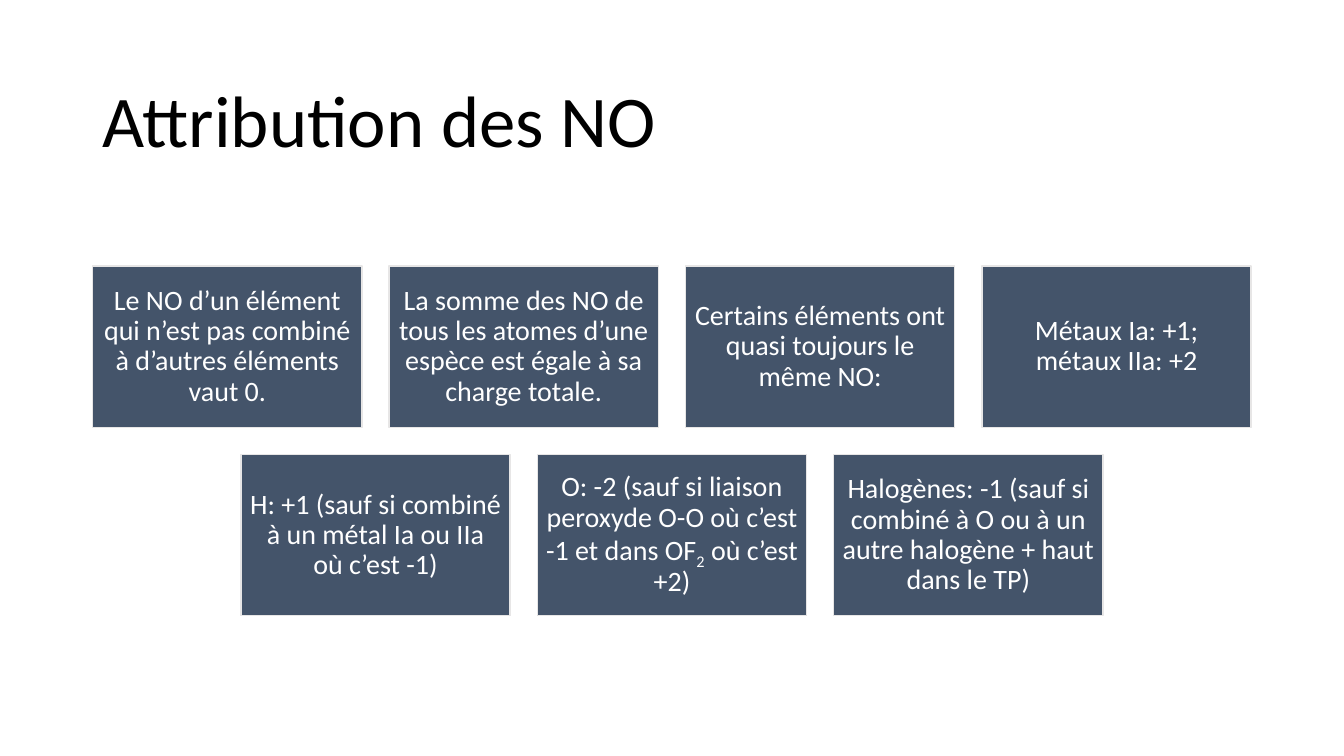
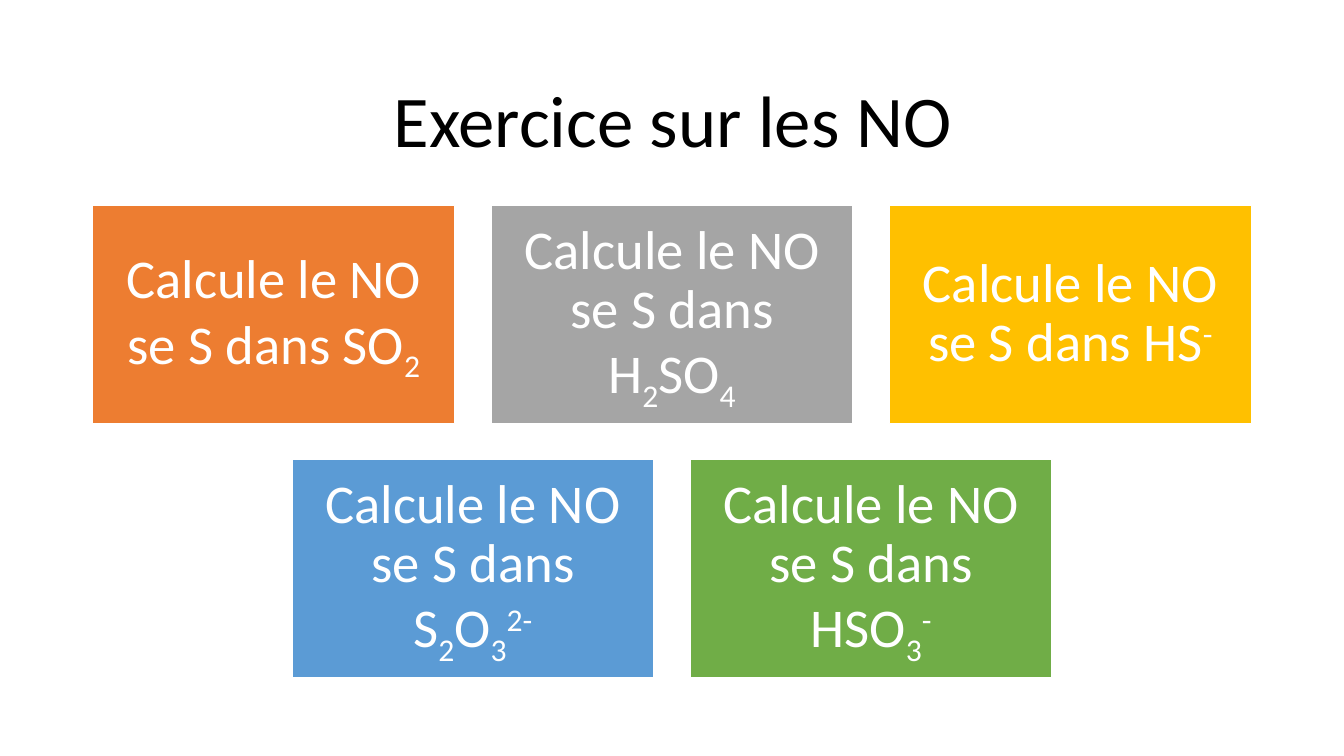
from pptx import Presentation
from pptx.dml.color import RGBColor
from pptx.enum.shapes import MSO_SHAPE
from pptx.enum.text import MSO_ANCHOR, PP_ALIGN
from pptx.util import Inches, Pt

SLIDE_WIDTH, SLIDE_HEIGHT = 13.33, 7.5
FONT = "Calibri"
BLACK, WHITE, SLATE, PALE = "000000", "FFFFFF", "44546A", "E7E6E6"
SUB, SUP = -25000, 30000  # baseline shift in thousandths of a percent
EXERCISE = "Calcule le NO se S dans "

# Each card is (fill, spans); a span is (text, baseline).
SLIDES = [
    {
        "title": "Attribution des NO", "title_align": PP_ALIGN.LEFT,
        "top": 2.64, "card": (2.67, 1.6), "gap": 0.27,
        "size": 20, "inset": 0.08, "outline": PALE,
        "rows": [
            [
                (SLATE, [("Le NO d’un élément qui n’est pas combiné à d’autres éléments vaut 0.", 0)]),
                (SLATE, [("La somme des NO de tous les atomes d’une espèce est égale à sa charge totale.", 0)]),
                (SLATE, [("Certains éléments ont quasi toujours le même NO:", 0)]),
                (SLATE, [("Métaux Ia: +1; métaux IIa: +2", 0)]),
            ],
            [
                (SLATE, [("H: +1 (sauf si combiné à un métal Ia ou IIa où c’est -1)", 0)]),
                (SLATE, [("O: -2 (sauf si liaison peroxyde O-O où c’est -1 et dans OF", 0),
                         ("2", SUB), (" où c’est +2)", 0)]),
                (SLATE, [("Halogènes: -1 (sauf si combiné à O ou à un autre halogène + haut dans le TP)", 0)]),
            ],
        ],
    },
    {
        "title": "Exercice sur les NO", "title_align": PP_ALIGN.CENTER,
        "top": 2.04, "card": (3.59, 2.16), "gap": 0.36,
        "size": 39, "inset": 0.16, "outline": WHITE,
        "rows": [
            [
                ("ED7D31", [(EXERCISE + "SO", 0), ("2", SUB)]),
                ("A5A5A5", [(EXERCISE + "H", 0), ("2", SUB), ("SO", 0), ("4", SUB)]),
                ("FFC000", [(EXERCISE + "HS", 0), ("-", SUP)]),
            ],
            [
                ("5B9BD5", [(EXERCISE + "S", 0), ("2", SUB), ("O", 0), ("3", SUB), ("2-", SUP)]),
                ("70AD47", [(EXERCISE + "HSO", 0), ("3", SUB), ("-", SUP)]),
            ],
        ],
    },
]


def rgb(value):
    return RGBColor.from_string(value)


def write(shape, spans, size, color, align, **margins):
    frame = shape.text_frame
    settings = {"word_wrap": True, "vertical_anchor": MSO_ANCHOR.MIDDLE, **margins}
    for name, value in settings.items():
        setattr(frame, name, value)
    para = frame.paragraphs[0]
    para.alignment = align
    para.line_spacing = 0.9
    for text, baseline in spans:
        span = para.add_run()
        span.text = text
        for name, value in {"name": FONT, "size": Pt(size)}.items():
            setattr(span.font, name, value)
        span.font.color.rgb = rgb(color)
        if baseline:
            span._r.get_or_add_rPr().set("baseline", str(baseline))


def add_title(page, text, align):
    box = page.shapes.add_textbox(Inches(0.92), Inches(0.61), Inches(11.5), Inches(1.24))
    write(box, [(text, 0)], 52, BLACK, align)


def add_card(page, left, top, fill, spans, style):
    width, height = style["card"]
    card = page.shapes.add_shape(
        MSO_SHAPE.RECTANGLE, Inches(left), Inches(top), Inches(width), Inches(height))
    card.shadow.inherit = False
    card.fill.solid()
    card.fill.fore_color.rgb = rgb(fill)
    card.line.color.rgb = rgb(style["outline"])
    card.line.width = Pt(1)
    margins = {f"margin_{side}": Inches(style["inset"])
               for side in ("left", "top", "right", "bottom")}
    write(card, spans, style["size"], WHITE, PP_ALIGN.CENTER, **margins)


def add_cards(page, style):
    """Lay out the rows of cards, each row centred on the slide."""
    width, height = style["card"]
    gap = style["gap"]
    for row_index, row in enumerate(style["rows"]):
        row_width = len(row) * (width + gap) - gap
        left = (SLIDE_WIDTH - row_width) / 2
        top = style["top"] + row_index * (height + gap)
        for column, (fill, spans) in enumerate(row):
            add_card(page, left + column * (width + gap), top, fill, spans, style)


def main():
    deck = Presentation()
    deck.slide_width = Inches(SLIDE_WIDTH)
    deck.slide_height = Inches(SLIDE_HEIGHT)
    for content in SLIDES:
        page = deck.slides.add_slide(deck.slide_layouts[6])
        add_title(page, content["title"], content["title_align"])
        add_cards(page, content)
    deck.save("out.pptx")


if __name__ == "__main__":
    main()
